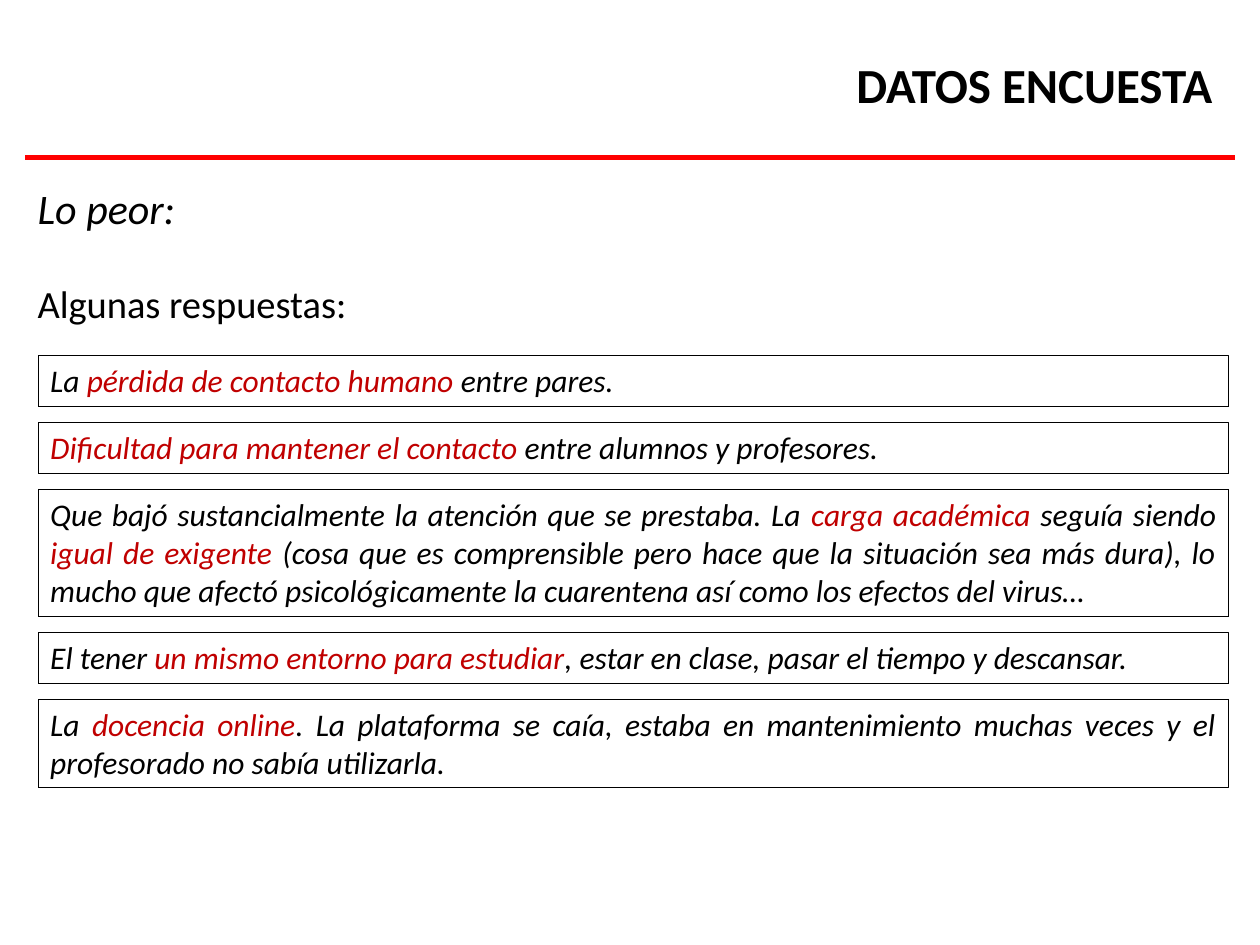
from dataclasses import dataclass

from lxml.etree import SubElement
from pptx import Presentation
from pptx.dml.color import RGBColor
from pptx.enum.dml import MSO_LINE
from pptx.enum.shapes import MSO_CONNECTOR, MSO_SHAPE
from pptx.enum.text import MSO_ANCHOR, PP_ALIGN
from pptx.oxml.ns import qn
from pptx.util import Inches, Pt

COLUMNS, ROWS = 100, 75


@dataclass(frozen=True)
class Theme:
    font: str = "Calibri"
    ink: str = "000000"
    accent: str = "C00000"
    rule: str = "FF0000"
    title_size: int = 28
    lead_size: int = 24
    intro_size: int = 22
    answer_size: int = 18
    rule_width: float = 3
    border_width: float = 0.25


class SlideBuilder:
    def __init__(self, deck, theme):
        self.theme = theme
        self.slide = deck.slides.add_slide(deck.slide_layouts[5])
        self.column = deck.slide_width / COLUMNS
        self.row = deck.slide_height / ROWS

    def place(self, left, top, width, height):
        return (round(left * self.column), round(top * self.row),
                round(width * self.column), round(height * self.row))

    def add_run(self, paragraph, text, size, color=None, bold=False, italic=False):
        run = paragraph.add_run()
        run.text = text
        run.font.name = self.theme.font
        run.font.size = Pt(size)
        run.font.bold = bold
        run.font.italic = italic
        run.font.color.rgb = RGBColor.from_string(color or self.theme.ink)

    def title(self, text, *area):
        heading = self.slide.shapes.title
        heading.left, heading.top, heading.width, heading.height = self.place(*area)
        heading.text_frame.vertical_anchor = MSO_ANCHOR.MIDDLE
        paragraph = heading.text_frame.paragraphs[0]
        paragraph.alignment = PP_ALIGN.RIGHT
        self.add_run(paragraph, text, self.theme.title_size, bold=True)

    def rule(self, left, right, level):
        x1, y, x2, _ = self.place(left, level, right, 0)
        line = self.slide.shapes.add_connector(MSO_CONNECTOR.STRAIGHT, x1, y, x2, y)
        line.line.color.rgb = RGBColor.from_string(self.theme.rule)
        line.line.width = Pt(self.theme.rule_width)
        SubElement(line._element.spPr, qn("a:effectLst"))

    def introduction(self, lead, intro, gap, *area):
        frame = self.slide.shapes.add_textbox(*self.place(*area)).text_frame
        frame.word_wrap = True
        self.add_run(frame.paragraphs[0], lead, self.theme.lead_size, italic=True)
        second = frame.add_paragraph()
        second.space_before = Pt(gap)
        self.add_run(second, intro, self.theme.intro_size)

    def answer(self, parts, *area):
        box = self.slide.shapes.add_shape(MSO_SHAPE.RECTANGLE, *self.place(*area))
        box.shadow.inherit = False
        box.fill.background()
        box.line.color.rgb = RGBColor.from_string(self.theme.ink)
        box.line.width = Pt(self.theme.border_width)
        box.line.dash_style = MSO_LINE.ROUND_DOT
        box.text_frame.word_wrap = True
        box.text_frame.vertical_anchor = MSO_ANCHOR.TOP
        paragraph = box.text_frame.paragraphs[0]
        paragraph.alignment = PP_ALIGN.JUSTIFY
        for text, highlighted in parts:
            color = self.theme.accent if highlighted else self.theme.ink
            self.add_run(paragraph, text, self.theme.answer_size, color, italic=True)


# Each answer: number of text lines, then (text, highlighted) parts
ANSWERS = [
    (1, [("La ", False), ("pérdida de contacto humano ", True),
         ("entre pares.", False)]),
    (1, [("Dificultad para mantener el contacto ", True),
         ("entre alumnos y profesores.", False)]),
    (3, [("Que bajó sustancialmente la atención que se prestaba. La ", False),
         ("carga académica ", True), ("seguía siendo ", False),
         ("igual de exigente ", True),
         ("(cosa que es comprensible pero hace que la situación sea más dura), "
          "lo mucho que afectó psicológicamente la cuarentena así como los "
          "efectos del virus…", False)]),
    (1, [("El tener ", False), ("un mismo entorno para estudiar", True),
         (", estar en clase, pasar el tiempo y descansar.", False)]),
    (2, [("La ", False), ("docencia online", True),
         (". La plataforma se caía, estaba en mantenimiento muchas veces y el "
          "profesorado no sabía utilizarla.", False)]),
]
LINE_ROWS, PADDING_ROWS, GAP_ROWS = 3.03, 1, 1.27


def main():
    deck = Presentation()
    deck.slide_width, deck.slide_height = Inches(10), Inches(7.5)
    page = SlideBuilder(deck, Theme())

    # Heading
    page.title("DATOS ENCUESTA", 30.7, 0.4, 66.5, 12.5)
    page.rule(2, 98, 12.5)

    # Introduction
    page.introduction("Lo peor:", "Algunas respuestas:", 27, 2, 14, 95.5, 13)

    # Answers, stacked with equal gaps
    top = 28.2
    for lines, parts in ANSWERS:
        height = PADDING_ROWS + lines * LINE_ROWS
        page.answer(parts, 3, top, 94.5, height)
        top += height + GAP_ROWS

    deck.save("out.pptx")


if __name__ == "__main__":
    main()
